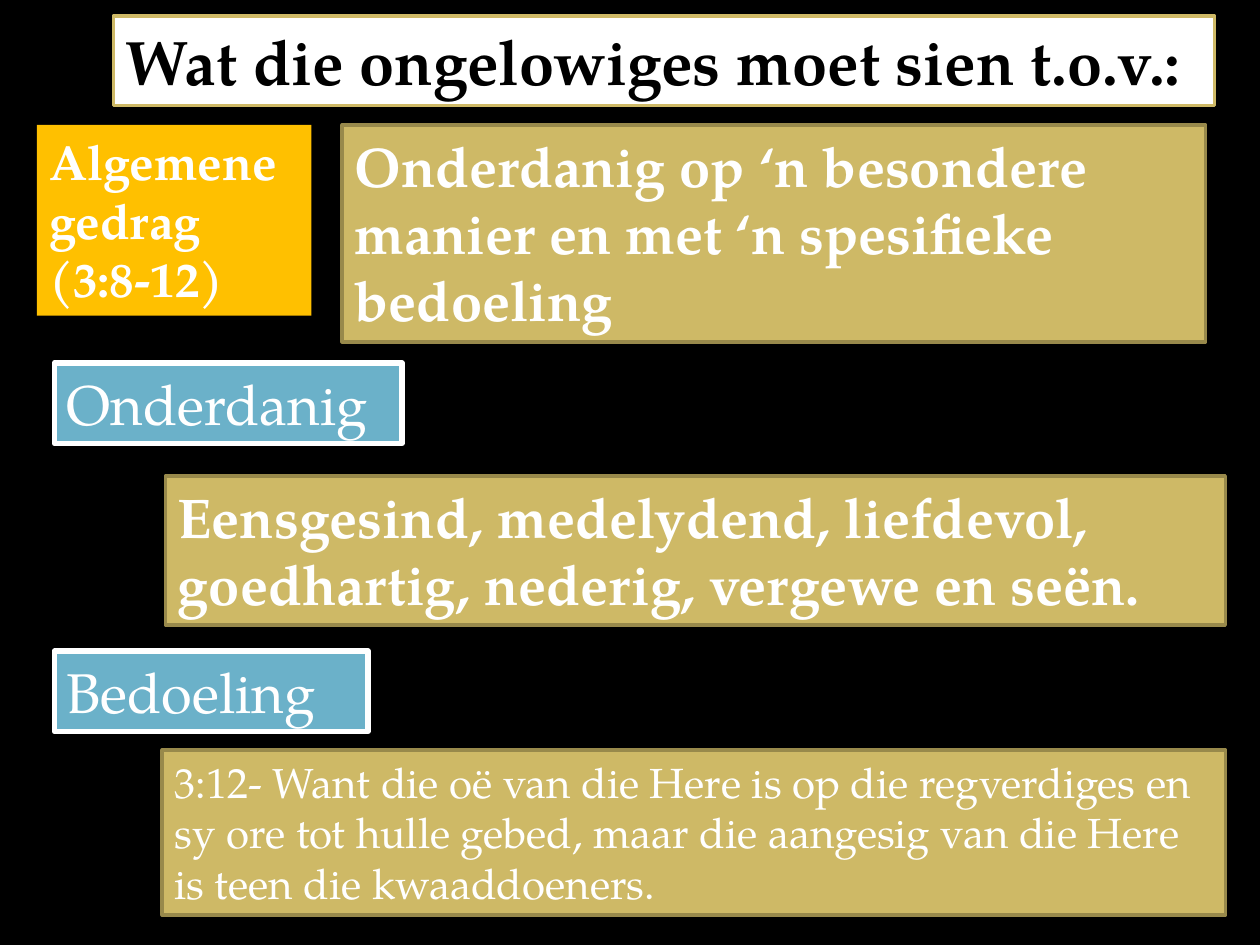
import pptx
import pptx.dml.color
import pptx.enum.shapes
import pptx.enum.text
import pptx.util

Pt = pptx.util.Pt
RGBColor = pptx.dml.color.RGBColor

BLACK = RGBColor(0x00, 0x00, 0x00)
WHITE = RGBColor(0xFF, 0xFF, 0xFF)
GOLD = RGBColor(0xCE, 0xB9, 0x66)
DARK_GOLD = RGBColor(0x98, 0x89, 0x4B)
ORANGE = RGBColor(0xFF, 0xC0, 0x00)
BLUE = RGBColor(0x6B, 0xB1, 0xC9)


class SlideBuilder:
    font_name = "TeX Gyre Pagella"

    def __init__(self, slide):
        self.slide = slide

    def background(self, color):
        fill = self.slide.background.fill
        fill.solid()
        fill.fore_color.rgb = color

    def box(self, bounds, text, size, fill, line=None, line_width=2,
            color=WHITE, bold=True):
        """Add a filled rectangle with left-aligned text; bounds are in points."""
        shape = self.slide.shapes.add_shape(
            pptx.enum.shapes.MSO_SHAPE.RECTANGLE, *map(Pt, bounds))
        shape.shadow.inherit = False
        shape.fill.solid()
        shape.fill.fore_color.rgb = fill
        if line is None:
            shape.line.fill.background()
        else:
            shape.line.color.rgb = line
            shape.line.width = Pt(line_width)

        text_frame = shape.text_frame
        text_frame.text = text
        text_frame.word_wrap = True
        text_frame.auto_size = pptx.enum.text.MSO_AUTO_SIZE.SHAPE_TO_FIT_TEXT
        text_frame.vertical_anchor = pptx.enum.text.MSO_ANCHOR.TOP
        for paragraph in text_frame.paragraphs:
            paragraph.alignment = pptx.enum.text.PP_ALIGN.LEFT
            for run in paragraph.runs:
                run.font.name = self.font_name
                run.font.size = Pt(size)
                run.font.bold = bold
                run.font.color.rgb = color

    def heading(self, left, top, width, text):
        self.box((left, top, width, 46), text, 32, BLUE, WHITE, 3, bold=False)

    def statement(self, bounds, text, size=32, bold=True):
        self.box(bounds, text, size, GOLD, DARK_GOLD, bold=bold)


def main():
    presentation = pptx.Presentation()
    presentation.slide_width = Pt(720)
    presentation.slide_height = Pt(540)
    builder = SlideBuilder(
        presentation.slides.add_slide(presentation.slide_layouts[6]))
    builder.background(BLACK)

    builder.box((64.8, 9.2, 629.3, 51), "Wat die ongelowiges moet sien t.o.v.:",
                36, WHITE, GOLD, color=BLACK)
    builder.box((21, 71.4, 157, 109), "Algemene gedrag\n(3:8-12)", 28, ORANGE)
    builder.statement(
        (195.6, 71.4, 493.4, 124),
        "Onderdanig op ‘n besondere manier en met ‘n spesifieke bedoeling")

    builder.heading(31, 207.4, 198.7, "Onderdanig")
    builder.statement(
        (94.5, 272, 605.7, 85),
        "Eensgesind, medelydend, liefdevol, goedhartig, nederig, vergewe en seën.")

    builder.heading(31, 372, 179.3, "Bedoeling")
    builder.statement(
        (92.7, 428.6, 607.6, 94.4),
        "3:12- Want die oë van die Here is op die regverdiges en sy ore tot hulle "
        "gebed, maar die aangesig van die Here is teen die kwaaddoeners.",
        size=24, bold=False)

    presentation.save("out.pptx")


if __name__ == "__main__":
    main()
